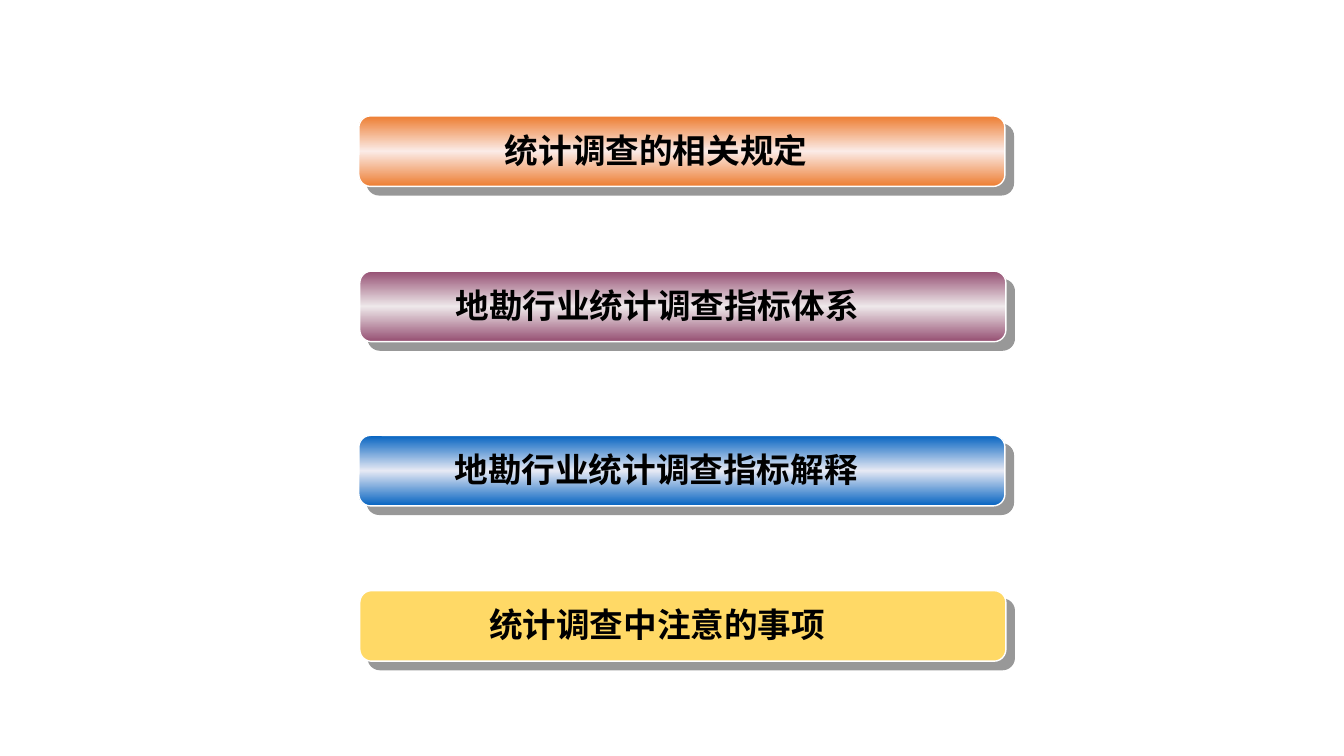
from copy import deepcopy

from lxml.etree import SubElement
from pptx import Presentation
from pptx.dml.color import RGBColor
from pptx.enum.shapes import MSO_SHAPE
from pptx.enum.text import MSO_ANCHOR, MSO_AUTO_SIZE, PP_ALIGN
from pptx.oxml.ns import qn
from pptx.util import Pt

WHITE = RGBColor(0xFF, 0xFF, 0xFF)
BLACK = RGBColor(0x00, 0x00, 0x00)
SHADE = RGBColor(0x33, 0x33, 0x33)
ORANGE = RGBColor(0xED, 0x7D, 0x31)
PEACH = RGBColor(0xFB, 0xEB, 0xE7)
PLUM = RGBColor(0x95, 0x4F, 0x72)
PINK = RGBColor(0xEE, 0xE8, 0xEA)
BLUE = RGBColor(0x05, 0x63, 0xC1)
PALE = RGBColor(0xE6, 0xE9, 0xF4)
YELLOW = RGBColor(0xFF, 0xD9, 0x66)

WIDTH, HEIGHT = 461.5, 50.4
TOPIC_BARS = [
    ("统计调查的相关规定", 256.3, 82.8, ORANGE, PEACH),
    ("地勘行业统计调查指标体系", 257, 193.7, PLUM, PINK),
    ("地勘行业统计调查指标解释", 256.3, 311, BLUE, PALE),
    ("统计调查中注意的事项", 257, 421.9, YELLOW, None),
]


def add_text(shapes, text, left, top, width, height, size=24, color=BLACK,
             bold=True, align=PP_ALIGN.CENTER, font="Arial"):
    """Add a one-line text box in the given format."""
    box = shapes.add_textbox(Pt(left), Pt(top), Pt(width), Pt(height))
    frame = box.text_frame
    frame.word_wrap = True
    frame.auto_size = MSO_AUTO_SIZE.SHAPE_TO_FIT_TEXT
    frame.vertical_anchor = MSO_ANCHOR.TOP
    line = frame.paragraphs[0]
    line.alignment = align
    run = line.add_run()
    run.text = text
    run.font.name = font
    run.font.size = Pt(size)
    run.font.bold = bold
    run.font.color.rgb = color


def add_glow(shape, edge, mid):
    """Fill a shape with a vertical gradient that is lightest halfway."""
    shape.fill.gradient()
    shape.fill.gradient_angle = 270
    first, last = shape.fill.gradient_stops
    first.color.rgb, first.position = edge, 0
    last.color.rgb, last.position = mid, 0.5
    stops = shape.element.spPr.find(".//" + qn("a:gsLst"))
    end = deepcopy(stops[0])
    end.set("pos", "100000")
    stops.append(end)


def add_shadow(shape, dist=8.5, angle=45, alpha=50):
    """Give a shape a hard offset shadow."""
    shape.shadow.inherit = False
    effects = shape.element.spPr.find(qn("a:effectLst"))
    shadow = SubElement(effects, qn("a:outerShdw"), blurRad="0",
                        dist=str(Pt(dist)), dir=str(angle * 60000),
                        algn="ctr", rotWithShape="0")
    color = SubElement(shadow, qn("a:srgbClr"), val=str(SHADE))
    SubElement(color, qn("a:alpha"), val=str(alpha * 1000))


def add_bar(slide, text, left, top, width, height, edge, mid):
    """Draw one topic bar with its label."""
    shapes = slide.shapes.add_group_shape().shapes
    bar = shapes.add_shape(MSO_SHAPE.ROUNDED_RECTANGLE,
                           Pt(left), Pt(top), Pt(width), Pt(height))
    bar.adjustments[0] = 0.167
    if mid is None:
        bar.fill.solid()
        bar.fill.fore_color.rgb = edge
    else:
        add_glow(bar, edge, mid)
    bar.line.color.rgb = WHITE
    bar.line.width = Pt(1)
    add_shadow(bar)
    add_text(shapes, text, left + 30.2, top + 6.2, width - 97.2, 36.7)


def main():
    """Build and save the slide."""
    deck = Presentation()
    deck.slide_width, deck.slide_height = Pt(960), Pt(540)
    slide = deck.slides.add_slide(deck.slide_layouts[6])
    for text, left, top, edge, mid in TOPIC_BARS:
        add_bar(slide, text, left, top, WIDTH, HEIGHT, edge, mid)
    deck.save("out.pptx")


if __name__ == "__main__":
    main()
